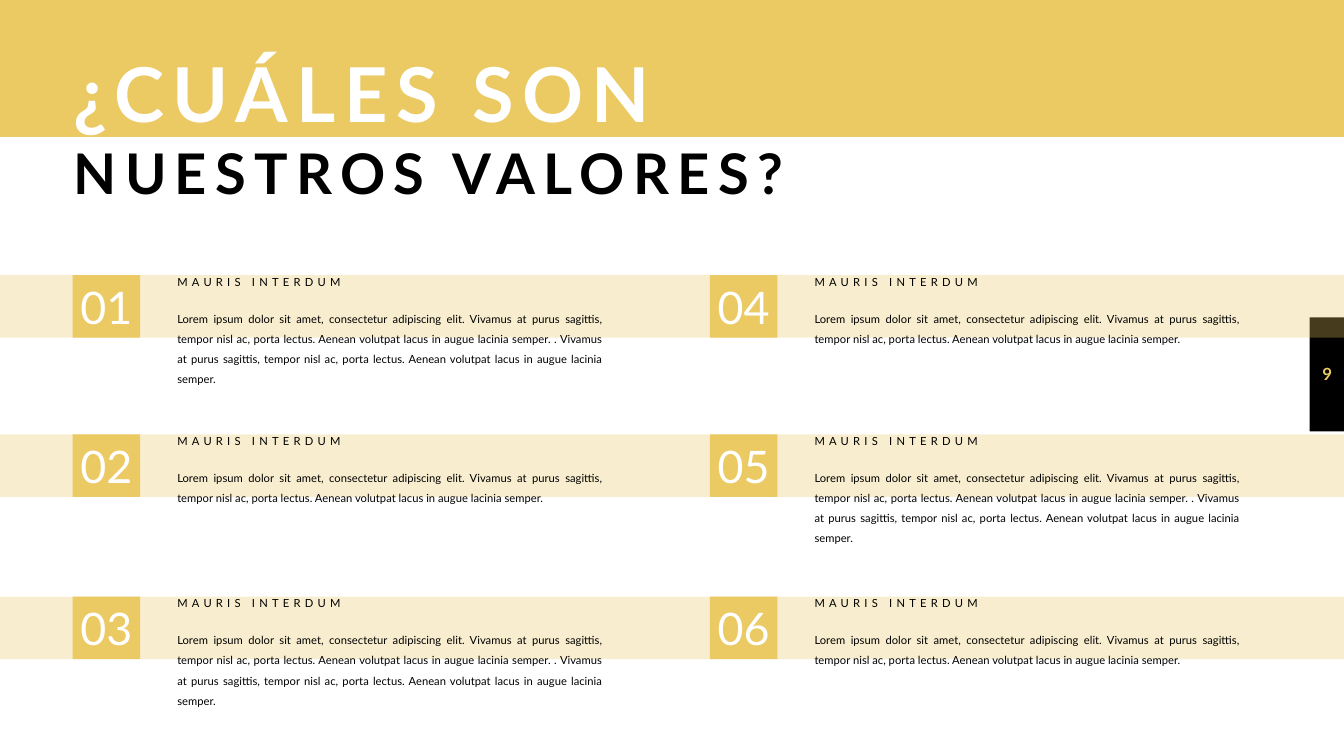
"""Build the numbered company values slide with its title band and page tab."""
from lxml.etree import SubElement
from pptx import Presentation
from pptx.dml.color import RGBColor
from pptx.enum.shapes import MSO_SHAPE as Shape
from pptx.enum.text import MSO_ANCHOR as Anchor, MSO_AUTO_SIZE as AutoSize, PP_ALIGN as Align
from pptx.oxml.ns import qn
from pptx.util import Inches, Pt

GOLD = RGBColor(0xEB, 0xC9, 0x63)
BLACK = RGBColor(0, 0, 0)
WHITE = RGBColor(0xFF, 0xFF, 0xFF)

HEADING = "MAURIS INTERDUM"
SHORT = ("Lorem ipsum dolor sit amet, consectetur adipiscing elit. Vivamus at purus sagittis, "
         "tempor nisl ac, porta lectus. Aenean volutpat lacus in augue lacinia semper.")
LONG = SHORT + " . " + SHORT[SHORT.index("Vivamus"):]
COLUMNS = [(0.72, [LONG, SHORT, LONG]), (7.04, [SHORT, LONG, SHORT])]
ROW_TOPS = [2.73, 4.31, 5.92]
ROW_HEIGHT = 0.62


def add_block(left, top, width, height, color, opacity=100):
    block = page.shapes.add_shape(
        Shape.RECTANGLE, Inches(left), Inches(top), Inches(width), Inches(height))
    block.shadow.inherit = False
    block.fill.solid()
    block.fill.fore_color.rgb = color
    block.line.fill.background()
    if opacity < 100:
        tint = block.fill._xPr.find(".//" + qn("a:srgbClr"))
        SubElement(tint, qn("a:alpha"), val=str(opacity * 1000))
    return block


def write(para, text, size, color, bold=False, tracking=0, **layout):
    span = para.add_run()
    span.text = text
    for name, value in {"name": "Lato", "size": Pt(size), "bold": bold}.items():
        setattr(span.font, name, value)
    span.font.color.rgb = color
    span.font._element.set("spc", str(tracking * 100))
    for name, value in layout.items():
        setattr(para, name, value)


deck = Presentation()
deck.slide_width, deck.slide_height = Inches(13.33), Inches(7.5)
page = deck.slides.add_slide(deck.slide_layouts[5])

add_block(12.99, 3.15, 0.34, 1.13, BLACK)
number_box = page.shapes.add_textbox(Inches(12.95), Inches(3.39), Inches(0.43), Inches(0.64))
frame_format = {"margin_left": 0, "margin_right": 0, "margin_top": 0, "margin_bottom": 0,
                "vertical_anchor": Anchor.MIDDLE, "word_wrap": False}
for name, value in frame_format.items():
    setattr(number_box.text_frame, name, value)
write(number_box.text_frame.paragraphs[0], "9", 12, GOLD, bold=True, alignment=Align.CENTER)

for top in ROW_TOPS:
    add_block(0, top, 13.33, ROW_HEIGHT, GOLD, opacity=30)
add_block(0, 0, 13.33, 1.36, GOLD)

badge_format = {**frame_format, "margin_top": Inches(0.11), "margin_bottom": Inches(0.11),
                "word_wrap": True}
for column, (left, bodies) in enumerate(COLUMNS):
    for row, (top, body) in enumerate(zip(ROW_TOPS, bodies)):
        badge = add_block(left, top, 0.67, ROW_HEIGHT, GOLD)
        for name, value in badge_format.items():
            setattr(badge.text_frame, name, value)
        number = column * len(ROW_TOPS) + row + 1
        write(badge.text_frame.paragraphs[0], f"{number:02}", 32, WHITE, alignment=Align.CENTER)

        height = 1.41 if body == LONG else 0.81
        box = page.shapes.add_textbox(
            Inches(left + 0.94), Inches(top - 0.05), Inches(4.42), Inches(height))
        box.text_frame.word_wrap = True
        write(box.text_frame.paragraphs[0], HEADING, 8, BLACK, tracking=3,
              alignment=Align.JUSTIFY)
        write(box.text_frame.add_paragraph(), body, 8, BLACK, alignment=Align.JUSTIFY,
              line_spacing=1.5, space_before=Pt(12))

title = page.shapes.title
title_format = {"left": Inches(0.63), "top": Inches(0.42),
                "width": Inches(8.16), "height": Inches(1.68)}
for name, value in title_format.items():
    setattr(title, name, value)
title.text_frame.vertical_anchor = Anchor.TOP
title.text_frame.auto_size = AutoSize.NONE
write(title.text_frame.paragraphs[0], "¿CUÁLES SON", 54, WHITE, bold=True, tracking=6,
      alignment=Align.LEFT)
write(title.text_frame.add_paragraph(), "NUESTROS VALORES?", 40, BLACK, bold=True, tracking=6,
      alignment=Align.LEFT)
page.shapes._spTree.append(title.element)

deck.save("out.pptx")
